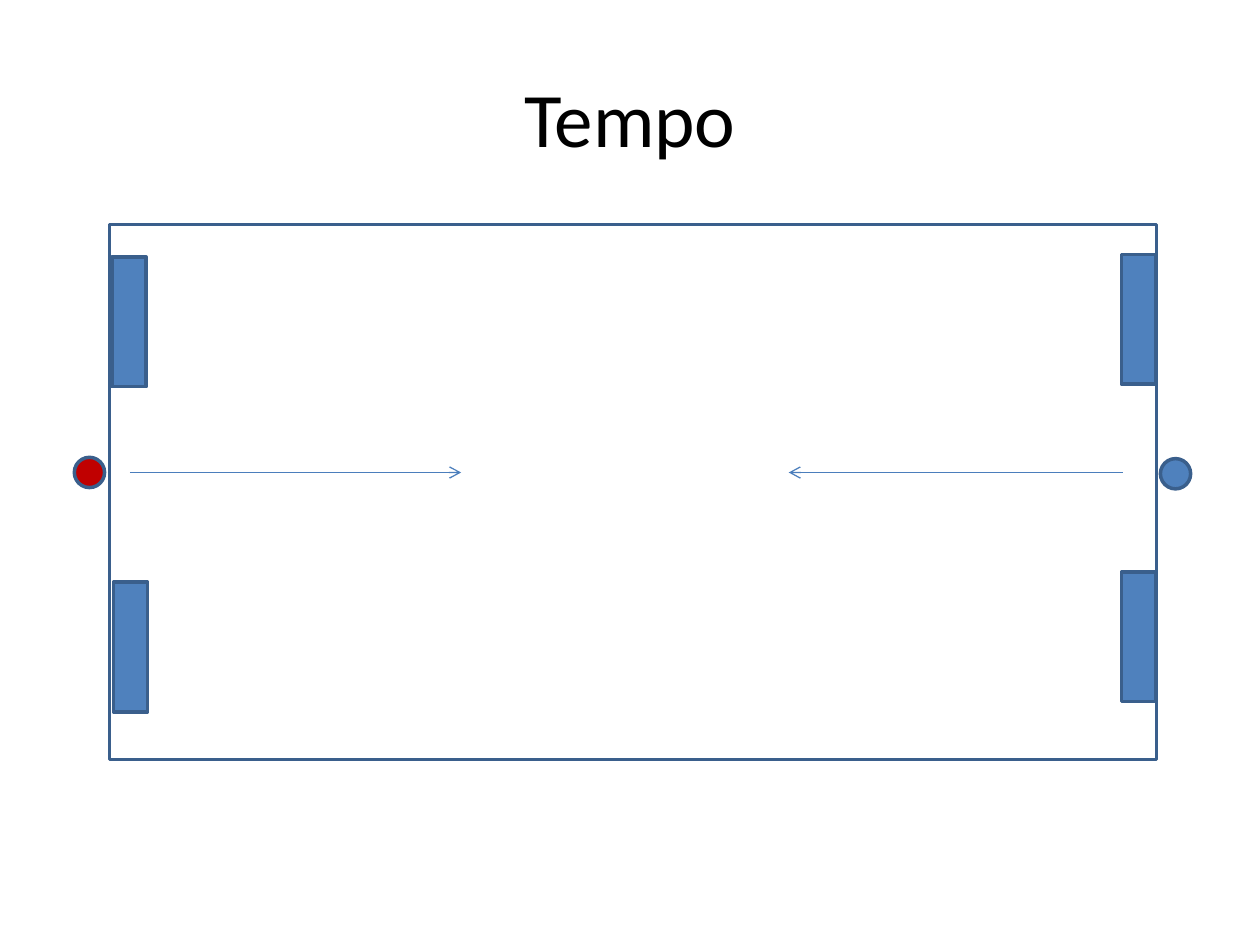
from dataclasses import dataclass

from lxml.etree import SubElement
from pptx import Presentation
from pptx.dml.color import RGBColor
from pptx.enum.shapes import MSO_CONNECTOR, MSO_SHAPE
from pptx.enum.text import MSO_ANCHOR, PP_ALIGN
from pptx.oxml.ns import qn
from pptx.util import Inches, Pt

COLUMNS, ROWS = 100, 75


@dataclass(frozen=True)
class Theme:
    font: str = "Calibri"
    title_size: float = 44
    text: str = "000000"
    blue: str = "4F81BD"
    red: str = "C00000"
    outline: str = "3A5F8C"
    arrow: str = "4B7EBC"
    outline_width: float = 2
    arrow_width: float = 0.75


class PitchSlide:
    """Draws on a grid of COLUMNS by ROWS cells."""

    def __init__(self, deck, theme):
        self.theme = theme
        self.column = deck.slide_width / COLUMNS
        self.row = deck.slide_height / ROWS
        self.shapes = deck.slides.add_slide(deck.slide_layouts[6]).shapes

    def place(self, left, top, width, height):
        return (round(left * self.column), round(top * self.row),
                round(width * self.column), round(height * self.row))

    def title(self, text, *box):
        frame = self.shapes.add_textbox(*self.place(*box)).text_frame
        frame.word_wrap = True
        frame.vertical_anchor = MSO_ANCHOR.MIDDLE
        paragraph = frame.paragraphs[0]
        paragraph.alignment = PP_ALIGN.CENTER
        run = paragraph.add_run()
        run.text = text
        run.font.name = self.theme.font
        run.font.size = Pt(self.theme.title_size)
        run.font.color.rgb = RGBColor.from_string(self.theme.text)

    def outlined(self, preset, box, fill=None):
        shape = self.shapes.add_shape(preset, *self.place(*box))
        shape.shadow.inherit = False
        if fill:
            shape.fill.solid()
            shape.fill.fore_color.rgb = RGBColor.from_string(fill)
        else:
            shape.fill.background()
        shape.line.color.rgb = RGBColor.from_string(self.theme.outline)
        shape.line.width = Pt(self.theme.outline_width)
        return shape

    def pitch(self, *box):
        self.outlined(MSO_SHAPE.RECTANGLE, box)

    def player(self, left, top, fill):
        self.outlined(MSO_SHAPE.OVAL, (left, top, 2.4, 2.4), fill)

    def goal(self, left, top):
        """Add a bar turned upright; left and top are those before the turn."""
        bar = self.outlined(MSO_SHAPE.RECTANGLE, (left, top, 10.3, 2.7), self.theme.blue)
        bar.rotation = 90

    def run_arrow(self, start, end, level):
        x1, y, x2, _ = self.place(start, level, end, level)
        arrow = self.shapes.add_connector(MSO_CONNECTOR.STRAIGHT, x1, y, x2, y)
        arrow.line.color.rgb = RGBColor.from_string(self.theme.arrow)
        arrow.line.width = Pt(self.theme.arrow_width)
        SubElement(arrow.line._get_or_add_ln(), qn("a:tailEnd"), type="arrow")
        SubElement(arrow._element.spPr, qn("a:effectLst"))


def main():
    deck = Presentation()
    deck.slide_width, deck.slide_height = Inches(10), Inches(7.5)
    theme = Theme()
    slide = PitchSlide(deck, theme)

    slide.title("Tempo", 5, 3, 90, 12.5)
    slide.player(92.1, 36.4, theme.blue)
    slide.player(5.9, 36.3, theme.red)
    slide.pitch(8.7, 17.8, 83.1, 42.5)
    for start, end in ((89.1, 62.6), (10.3, 36.6)):
        slide.run_arrow(start, end, ROWS / 2)
    for left, top in ((85.2, 24), (5.1, 24.2), (5.2, 50), (85.2, 49.2)):
        slide.goal(left, top)

    deck.save("out.pptx")


if __name__ == "__main__":
    main()
